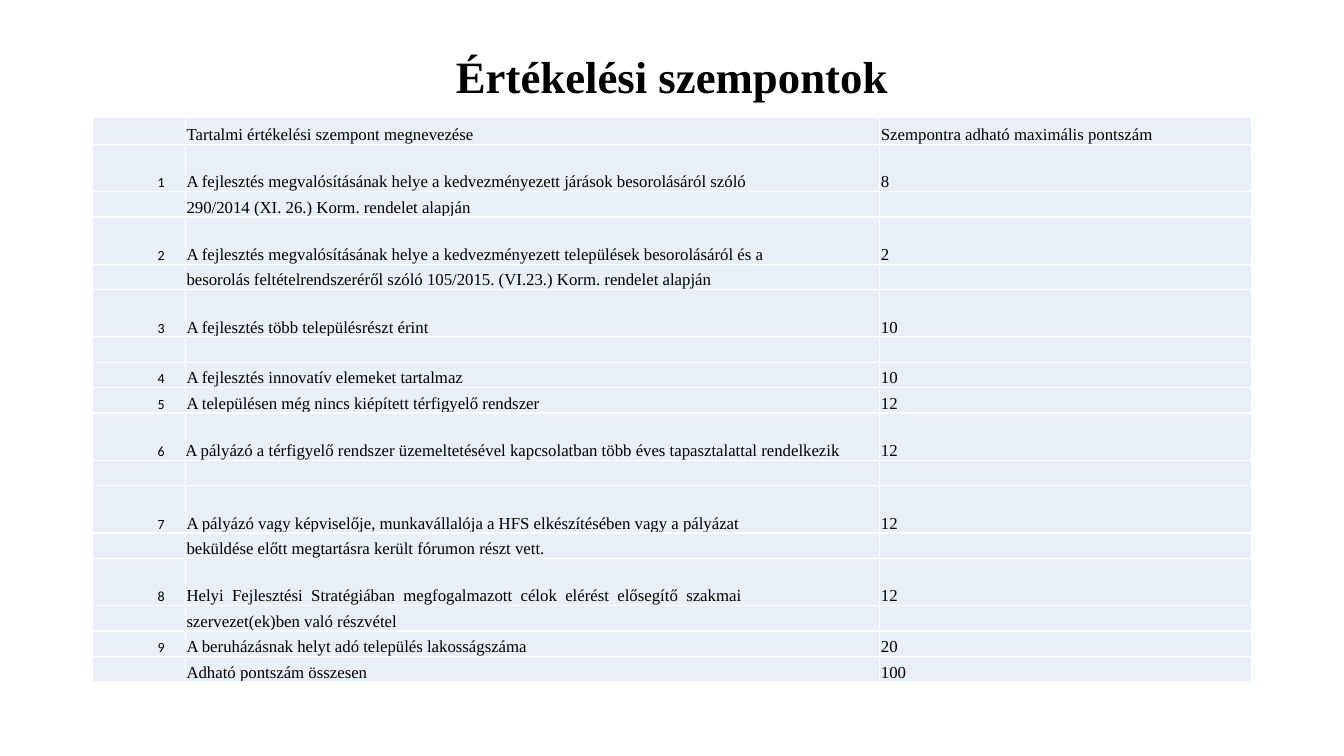
from lxml import etree
from pptx import Presentation
from pptx.dml.color import RGBColor
from pptx.enum.text import MSO_ANCHOR, PP_ALIGN
from pptx.oxml.ns import qn
from pptx.util import Cm, Pt

BLACK = RGBColor(0x00, 0x00, 0x00)
WHITE = RGBColor(0xFF, 0xFF, 0xFF)
PALE_BLUE = RGBColor(0xEA, 0xEF, 0xF7)
LEFT, CENTER, RIGHT = PP_ALIGN.LEFT, PP_ALIGN.CENTER, PP_ALIGN.RIGHT
MIDDLE, BOTTOM = MSO_ANCHOR.MIDDLE, MSO_ANCHOR.BOTTOM
SERIF, SANS = "Times New Roman", "Calibri"

HEADER_HEIGHT, TALL, SHORT = 0.69, 1.19, 0.64
COLUMN_WIDTHS = (2.34, 17.5, 9.37)
FLUSH_NUMBER = "6"
CRITERIA = [
    (HEADER_HEIGHT, "", "Tartalmi értékelési szempont megnevezése", "Szempontra adható maximális pontszám"),
    (TALL, "1", "A fejlesztés megvalósításának helye a kedvezményezett járások besorolásáról szóló", "8"),
    (SHORT, "", "290/2014 (XI. 26.) Korm. rendelet alapján", ""),
    (TALL, "2", "A fejlesztés megvalósításának helye a kedvezményezett települések besorolásáról és a", "2"),
    (SHORT, "", "besorolás feltételrendszeréről szóló 105/2015. (VI.23.) Korm. rendelet alapján", ""),
    (TALL, "3", "A fejlesztés több településrészt érint", "10"),
    (SHORT, "", "", ""),
    (SHORT, "4", "A fejlesztés innovatív elemeket tartalmaz", "10"),
    (SHORT, "5", "A településen még nincs kiépített térfigyelő rendszer", "12"),
    (TALL, "6", "A pályázó a térfigyelő rendszer üzemeltetésével kapcsolatban több éves tapasztalattal rendelkezik", "12"),
    (SHORT, "", "", ""),
    (TALL, "7", "A pályázó vagy képviselője, munkavállalója a HFS elkészítésében vagy a pályázat", "12"),
    (SHORT, "", "beküldése előtt megtartásra került fórumon részt vett.", ""),
    (TALL, "8", "Helyi  Fejlesztési  Stratégiában  megfogalmazott  célok  elérést  elősegítő  szakmai", "12"),
    (SHORT, "", "szervezet(ek)ben való részvétel", ""),
    (SHORT, "9", "A beruházásnak helyt adó település lakosságszáma", "20"),
    (SHORT, "", "Adható pontszám összesen", "100"),
]


class SlideBuilder:
    def __init__(self, slide):
        self.slide = slide
        self.text_color = BLACK
        self.cell_color = PALE_BLUE
        self.border_color = WHITE

    def style_paragraph(self, paragraph, font_name, size, alignment, bold=False):
        paragraph.alignment = alignment
        for run in paragraph.runs:
            run.font.name = font_name
            run.font.size = Pt(size)
            run.font.bold = bold
            run.font.color.rgb = self.text_color
        if not paragraph.runs:
            etree.SubElement(paragraph._p, qn("a:endParaRPr"), sz=str(size * 100))

    def add_title(self, text, left, top, width, height):
        text_frame = self.slide.shapes.add_textbox(Cm(left), Cm(top), Cm(width), Cm(height)).text_frame
        text_frame.word_wrap = True
        text_frame.vertical_anchor = MIDDLE
        text_frame.text = text
        paragraph = text_frame.paragraphs[0]
        paragraph.line_spacing = 0.9
        self.style_paragraph(paragraph, SERIF, 32, CENTER, bold=True)

    def add_borders(self, cell):
        properties = cell._tc.get_or_add_tcPr()
        for position, side in enumerate(("a:lnL", "a:lnR", "a:lnT", "a:lnB")):
            line = etree.Element(qn(side), w=str(Pt(1)))
            fill = etree.SubElement(line, qn("a:solidFill"))
            etree.SubElement(fill, qn("a:srgbClr"), val=str(self.border_color))
            properties.insert(position, line)

    def fill_cell(self, cell, text, font_name, size, alignment, left_margin, right_margin):
        cell.fill.solid()
        cell.fill.fore_color.rgb = self.cell_color
        cell.vertical_anchor = BOTTOM
        cell.margin_top = cell.margin_bottom = 0
        cell.margin_left = Cm(left_margin)
        cell.margin_right = Cm(right_margin)
        cell.text_frame.text = text
        self.style_paragraph(cell.text_frame.paragraphs[0], font_name, size, alignment)
        self.add_borders(cell)

    def add_criteria_table(self, criteria, column_widths, left, top):
        height = sum(row[0] for row in criteria)
        table = self.slide.shapes.add_table(
            len(criteria), len(column_widths), Cm(left), Cm(top), Cm(sum(column_widths)), Cm(height)
        ).table
        table.first_row = table.horz_banding = False
        for column, width in zip(table.columns, column_widths):
            column.width = Cm(width)
        for row, (row_height, number, criterion, points) in zip(table.rows, criteria):
            row.height = Cm(row_height)
            number_cell, criterion_cell, points_cell = row.cells
            indent = 0 if number == FLUSH_NUMBER else 0.03
            self.fill_cell(number_cell, number, SANS, 10, RIGHT, 0, 0.52)
            self.fill_cell(criterion_cell, criterion, SERIF, 12, LEFT, indent, 0)
            self.fill_cell(points_cell, points, SERIF, 12, LEFT, 0.03, 0)


def main():
    presentation = Presentation()
    presentation.slide_width = Cm(33.87)
    presentation.slide_height = Cm(19.05)
    builder = SlideBuilder(presentation.slides.add_slide(presentation.slide_layouts[6]))
    builder.add_title("Értékelési szempontok", 2.33, 1.01, 29.21, 1.94)
    builder.add_criteria_table(CRITERIA, COLUMN_WIDTHS, 2.33, 2.95)
    presentation.save("out.pptx")


if __name__ == "__main__":
    main()
